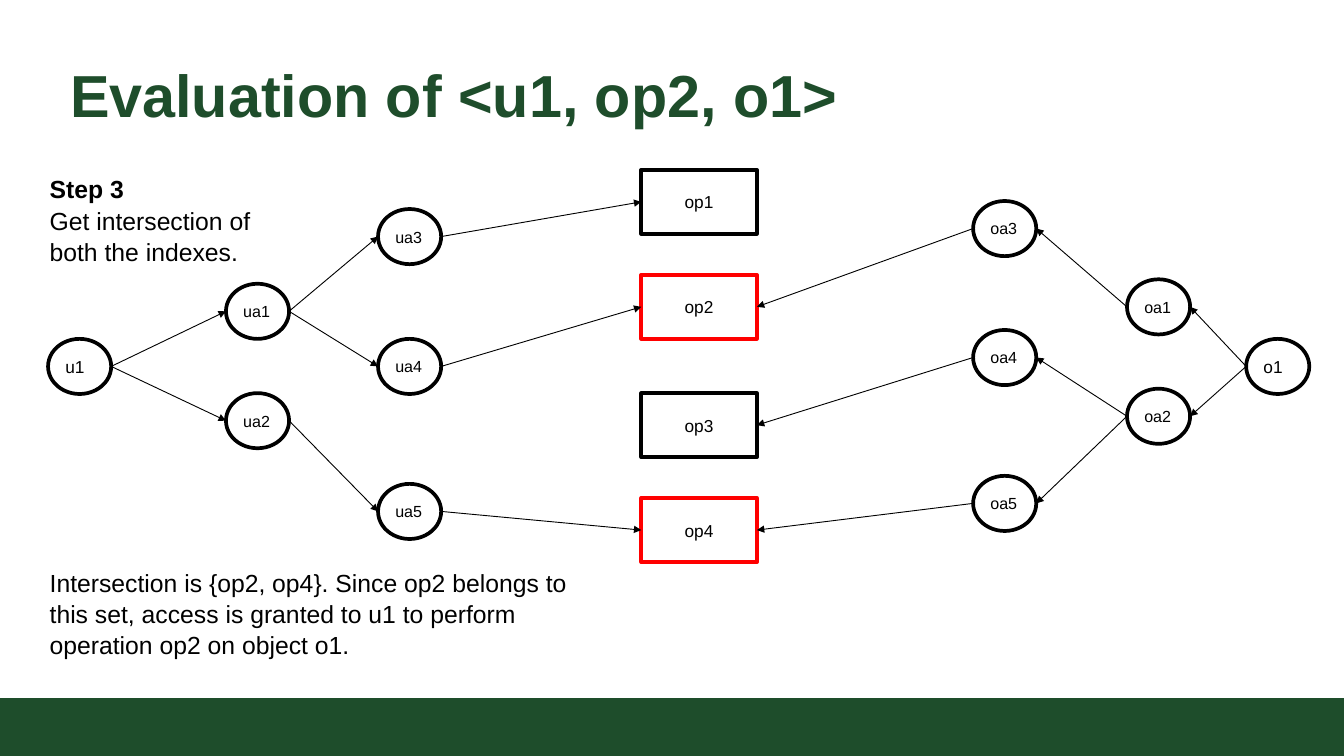
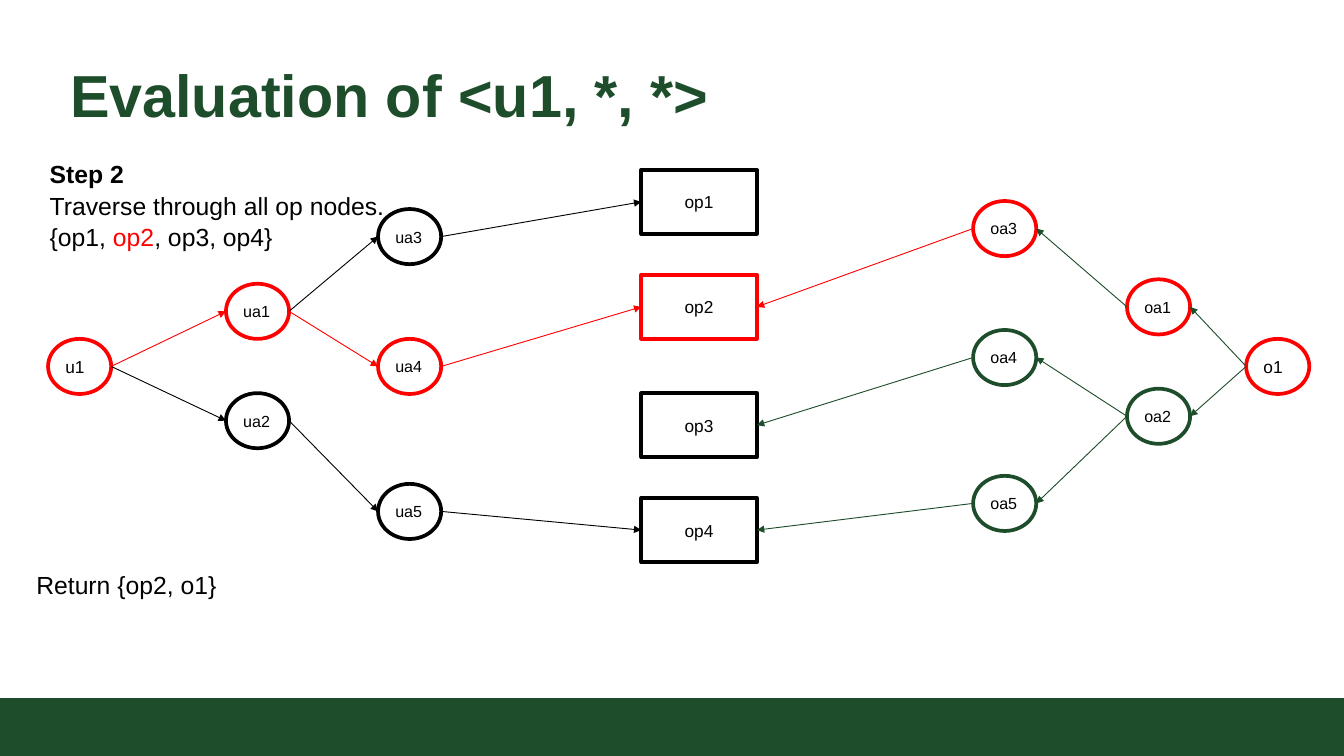
"""Build two slides that evaluate access requests on a policy graph."""
from dataclasses import dataclass

import pptx
import pptx.dml.color
import pptx.enum.shapes
import pptx.enum.text
import pptx.oxml.ns
import pptx.util
from lxml import etree

Inches = pptx.util.Inches
Pt = pptx.util.Pt
SHAPES = pptx.enum.shapes.MSO_SHAPE
ANCHOR = pptx.enum.text.MSO_ANCHOR
ALIGN = pptx.enum.text.PP_ALIGN
qn = pptx.oxml.ns.qn


@dataclass(frozen=True)
class Theme:
    """Colours, font and sizes shared by the slides."""
    font: str = "Arial"
    green: str = "1E4D2B"
    black: str = "000000"
    red: str = "FF0000"
    title_size: int = 48
    body_size: int = 20
    root_size: int = 14
    attribute_size: int = 13
    operation_size: int = 14
    outline: float = 3
    arrow: float = 0.75
    body_spacing: float = 1.06


THEME = Theme()
SLIDE_SIZE = (15.11, 8.5)
NODE_SIZE = (0.71, 0.62)
OPERATION_SIZE = (1.3, 0.72)
USER_NODES = {
    "u1": (0.54, 3.81),
    "ua1": (2.54, 3.19), "ua2": (2.54, 4.42),
    "ua3": (4.25, 2.35), "ua4": (4.25, 3.81), "ua5": (4.25, 5.44),
}
OBJECT_NODES = {
    "o1": (14.01, 3.81),
    "oa1": (12.67, 3.14), "oa2": (12.67, 4.37),
    "oa3": (10.94, 2.26), "oa4": (10.94, 3.71), "oa5": (10.94, 5.35),
}
OPERATIONS = {
    "op1": (7.21, 1.91), "op2": (7.21, 3.09),
    "op3": (7.21, 4.42), "op4": (7.21, 5.6),
}
EDGES = (
    ("u1", "ua1"), ("u1", "ua2"), ("ua1", "ua3"), ("ua1", "ua4"),
    ("ua2", "ua5"), ("ua3", "op1"), ("ua4", "op2"), ("ua5", "op4"),
    ("o1", "oa1"), ("o1", "oa2"), ("oa1", "oa3"), ("oa2", "oa5"),
    ("oa2", "oa4"), ("oa4", "op3"), ("oa5", "op4"), ("oa3", "op2"),
)


def rgb(colour):
    """Return a colour object for a hex value."""
    return pptx.dml.color.RGBColor.from_string(colour)


def add_run(paragraph, text, size, colour=THEME.black, bold=False):
    """Add one formatted run."""
    run = paragraph.add_run()
    run.text = text
    run.font.name = THEME.font
    run.font.size = Pt(size)
    run.font.bold = bold
    run.font.color.rgb = rgb(colour)


def set_frame(frame, anchor, side_inset=0.1):
    """Set wrapping, anchor and insets of a text frame."""
    frame.word_wrap = True
    frame.vertical_anchor = anchor
    frame.margin_left = frame.margin_right = Inches(side_inset)
    frame.margin_top = frame.margin_bottom = Inches(0.1)


def add_title(slide, text):
    """Add the slide title."""
    box = slide.shapes.add_textbox(
        Inches(0.69), Inches(0.44), Inches(13.74), Inches(1.11))
    set_frame(box.text_frame, ANCHOR.BOTTOM)
    add_run(box.text_frame.paragraphs[0], text, THEME.title_size,
            THEME.green, bold=True)


def add_band(slide):
    """Add the green band at the foot of the slide."""
    top = 7.85
    band = slide.shapes.add_shape(
        SHAPES.RECTANGLE, 0, Inches(top),
        Inches(SLIDE_SIZE[0]), Inches(SLIDE_SIZE[1] - top))
    band.shadow.inherit = False
    band.fill.solid()
    band.fill.fore_color.rgb = rgb(THEME.green)
    band.line.fill.background()


def add_body(slide, bounds, paragraphs):
    """Add body text given as paragraphs of (text, colour, bold) runs."""
    box = slide.shapes.add_textbox(*map(Inches, bounds))
    frame = box.text_frame
    set_frame(frame, ANCHOR.TOP)
    for index, runs in enumerate(paragraphs):
        paragraph = frame.add_paragraph() if index else frame.paragraphs[0]
        paragraph.line_spacing = THEME.body_spacing
        for text, colour, bold in runs:
            add_run(paragraph, text, THEME.body_size, colour, bold)


def add_node(slide, label, position, colour):
    """Add an outlined operation box or a user or object ellipse."""
    is_operation = label in OPERATIONS
    size = OPERATION_SIZE if is_operation else NODE_SIZE
    preset = SHAPES.RECTANGLE if is_operation else SHAPES.OVAL
    node = slide.shapes.add_shape(preset, *map(Inches, position + size))
    node.shadow.inherit = False
    node.fill.background()
    node.line.color.rgb = rgb(colour)
    node.line.width = Pt(THEME.outline)
    set_frame(node.text_frame, ANCHOR.MIDDLE, 0.1 if is_operation else 0.09)
    paragraph = node.text_frame.paragraphs[0]
    paragraph.alignment = ALIGN.CENTER if is_operation else ALIGN.LEFT
    if is_operation:
        text_size = THEME.operation_size
    elif label in ("u1", "o1"):
        text_size = THEME.root_size
    else:
        text_size = THEME.attribute_size
    add_run(paragraph, label, text_size)
    return node


def side_point(node, right):
    """Return the middle of the right or left side of a node."""
    return node.left + (node.width if right else 0), node.top + node.height // 2


def side_site(node, right):
    """Return the connection site number of a node side."""
    if node.auto_shape_type == SHAPES.OVAL:
        return 6 if right else 2
    return 3 if right else 1


def add_arrow(slide, source, target, colour):
    """Add an arrow glued to the facing sides of two nodes."""
    rightward = source.left < target.left
    ends = ((source, rightward, "a:stCxn"), (target, not rightward, "a:endCxn"))
    points = [side_point(node, right) for node, right, _ in ends]
    arrow = slide.shapes.add_connector(
        pptx.enum.shapes.MSO_CONNECTOR.STRAIGHT, *points[0], *points[1])
    arrow.line.color.rgb = rgb(colour)
    arrow.line.width = Pt(THEME.arrow)
    properties = arrow._element.spPr
    etree.SubElement(properties.find(qn("a:ln")), qn("a:tailEnd"), type="triangle")
    etree.SubElement(properties, qn("a:effectLst"))
    links = arrow._element.find(".//" + qn("p:cNvCxnSpPr"))
    for node, right, tag in ends:
        etree.SubElement(links, qn(tag), id=str(node.shape_id),
                         idx=str(side_site(node, right)))


def add_graph(slide, red_nodes, red_edges=(), object_colour=THEME.black):
    """Add the policy graph with its highlighted nodes and edges."""
    def base_colour(label):
        """Return the colour of a part that is not highlighted."""
        return object_colour if label in OBJECT_NODES else THEME.black

    nodes = {}
    for label, position in (USER_NODES | OBJECT_NODES | OPERATIONS).items():
        colour = THEME.red if label in red_nodes else base_colour(label)
        nodes[label] = add_node(slide, label, position, colour)
    for source, target in EDGES:
        highlighted = (source, target) in red_edges
        colour = THEME.red if highlighted else base_colour(source)
        add_arrow(slide, nodes[source], nodes[target], colour)


def add_base_slide(deck, title):
    """Add a blank slide with the shared band and title."""
    slide = deck.slides.add_slide(deck.slide_layouts[6])
    add_band(slide)
    add_title(slide, title)
    return slide


def main():
    """Build and save the slides."""
    deck = pptx.Presentation()
    deck.slide_width, deck.slide_height = map(Inches, SLIDE_SIZE)
    black, red = THEME.black, THEME.red

    intersection = add_base_slide(deck, "Evaluation of <u1, op2, o1>")
    add_graph(intersection, {"op2", "op4"})
    add_body(intersection, (0.46, 1.84, 3, 1.53), [
        [("Step 3", black, True)],
        [("Get intersection of both the indexes.", black, False)],
    ])
    add_body(intersection, (0.46, 6.26, 6.11, 1.4), [
        [("Intersection is {op2, op4}. Since op2 belongs to this set, access "
          "is granted to u1 to perform operation op2 on object o1.",
          black, False)],
    ])

    traversal = add_base_slide(deck, "Evaluation of <u1, *, *>")
    add_graph(
        traversal,
        {"u1", "ua1", "ua4", "op2", "oa3", "oa1", "o1"},
        {("u1", "ua1"), ("ua1", "ua4"), ("ua4", "op2"), ("oa3", "op2")},
        THEME.green)
    add_body(traversal, (0.46, 1.67, 4.22, 0.88), [
        [("Step 2", black, True)],
        [("Traverse through all op nodes. {op1, ", black, False),
         ("op2", red, False), (", op3, op4}", black, False)],
    ])
    add_body(traversal, (0.31, 6.29, 10.54, 1.26), [
        [("Return {op2, o1}", black, False)],
    ])
    deck.save("out.pptx")


if __name__ == "__main__":
    main()
